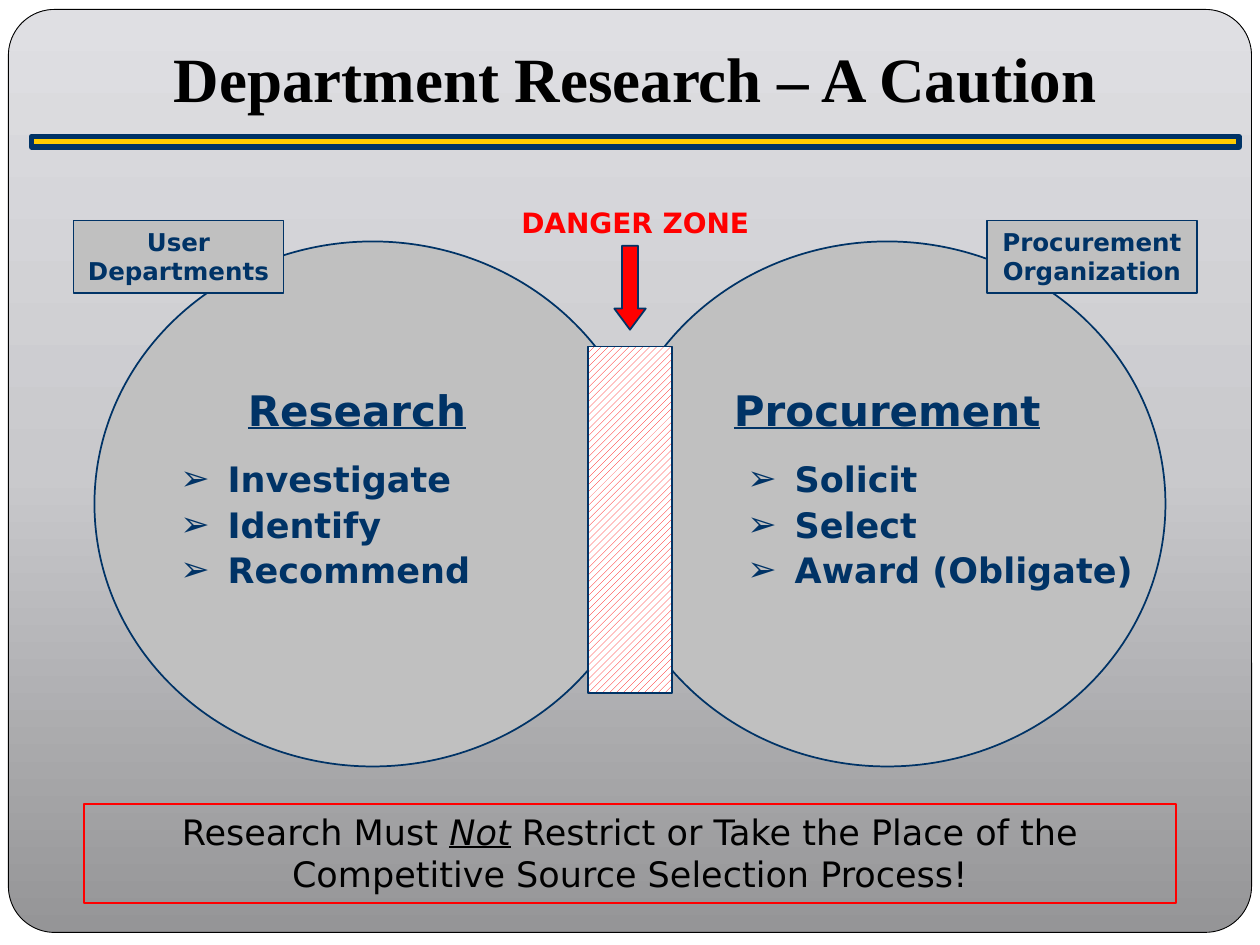
from dataclasses import dataclass

from lxml import etree
from pptx import Presentation
from pptx import util as u
from pptx.dml.color import RGBColor
from pptx.enum import dml, shapes, text
from pptx.oxml import parse_xml
from pptx.oxml.ns import nsdecls, qn

PX = 7620  # 120 px to the inch


@dataclass(frozen=True)
class Theme:
    navy: str = "003366"
    gray: str = "C0C0C0"
    red: str = "FF0000"
    gold: str = "FFCC00"
    black: str = "000000"
    white: str = "FFFFFF"
    panel_stops: tuple = ((0, "959597"), (50, "C9C9CC"), (100, "DFDFE3"))
    title_font: str = "Times New Roman"
    body_font: str = "DejaVu Sans"
    title_size: int = 36
    heading_size: int = 24
    body_size: int = 20
    label_size: int = 16
    tag_size: int = 14


THEME = Theme()
SHAPE = shapes.MSO_SHAPE


def px(*lengths):
    return [u.Emu(length * PX) for length in lengths]


def rgb(color):
    return RGBColor.from_string(color)


def style_run(run, size, color, bold=True, font=THEME.body_font):
    run.font.name = font
    run.font.size = u.Pt(size)
    run.font.bold = bold
    run.font.color.rgb = rgb(color)


def add_box(slide, kind, box, fill=None, line=None, width=1):
    shape = slide.shapes.add_shape(kind, *px(*box))
    shape.shadow.inherit = False
    if fill:
        shape.fill.solid()
        shape.fill.fore_color.rgb = rgb(fill)
    else:
        shape.fill.background()
    if line:
        shape.line.color.rgb = rgb(line)
        shape.line.width = u.Pt(width)
    else:
        shape.line.fill.background()
    return shape


def write_centered(shape, parts, size, color, bold=True):
    frame = shape.text_frame
    frame.word_wrap = True
    frame.vertical_anchor = text.MSO_ANCHOR.TOP
    paragraph = frame.paragraphs[0]
    paragraph.alignment = text.PP_ALIGN.CENTER
    for part in parts:
        run = paragraph.add_run()
        run.text = part
        style_run(run, size, color, bold)
    return paragraph.runs


def add_panel(slide):
    panel = add_box(slide, SHAPE.ROUNDED_RECTANGLE, (8, 9, 1184, 879),
                    line=THEME.black, width=0.5)
    panel.adjustments[0] = 0.05
    stops = "".join(f'<a:gs pos="{pos * 1000}"><a:srgbClr val="{color}"/></a:gs>'
                    for pos, color in THEME.panel_stops)
    gradient = parse_xml(f'<a:gradFill {nsdecls("a")}><a:gsLst>{stops}</a:gsLst>'
                         '<a:lin ang="16200000" scaled="0"/></a:gradFill>')
    properties = panel._element.spPr
    properties.replace(properties.find(qn("a:noFill")), gradient)


def add_title(slide, wording):
    title = slide.shapes.title
    title.left, title.top, title.width, title.height = px(55, 42, 1100, 80)
    frame = title.text_frame
    frame.text = wording
    frame.auto_size = text.MSO_AUTO_SIZE.NONE
    frame.vertical_anchor = text.MSO_ANCHOR.BOTTOM
    frame.margin_bottom, = px(12)
    frame.paragraphs[0].alignment = text.PP_ALIGN.CENTER
    style_run(frame.paragraphs[0].runs[0], THEME.title_size, THEME.black,
              font=THEME.title_font)
    # Bring the title in front of the panel
    slide.shapes._spTree.append(title._element)


def add_heading(slide, box, wording):
    heading = add_box(slide, SHAPE.RECTANGLE, box, THEME.gray)
    run, = write_centered(heading, [wording], THEME.heading_size, THEME.navy)
    run.font.underline = True


def add_bullets(slide, box, items):
    frame = slide.shapes.add_textbox(*px(*box)).text_frame
    frame.word_wrap = True
    frame.text = "\n".join(items)
    for index, paragraph in enumerate(frame.paragraphs):
        paragraph.space_before = u.Pt(2 if index else 0)
        style_run(paragraph.runs[0], THEME.body_size, THEME.navy)
        properties = paragraph._p.get_or_add_pPr()
        properties.set("marL", str(45 * PX))
        properties.set("indent", str(-45 * PX))
        etree.SubElement(properties, qn("a:buFont")).set("typeface", THEME.body_font)
        etree.SubElement(properties, qn("a:buChar")).set("char", "➢")


def add_tag(slide, left, wording):
    tag = add_box(slide, SHAPE.RECTANGLE, (left, 210, 200, 69),
                  THEME.gray, THEME.navy)
    write_centered(tag, [wording], THEME.tag_size, THEME.navy)


def add_danger_zone(slide):
    zone = add_box(slide, SHAPE.RECTANGLE, (560, 330, 80, 330), line=THEME.navy)
    zone.fill.patterned()
    zone.fill.pattern = dml.MSO_PATTERN.WIDE_UPWARD_DIAGONAL
    zone.fill.fore_color.rgb = rgb(THEME.red)
    zone.fill.back_color.rgb = rgb(THEME.white)

    label = slide.shapes.add_textbox(*px(440, 190, 330, 44))
    write_centered(label, ["DANGER ZONE"], THEME.label_size, THEME.red)

    arrow = add_box(slide, SHAPE.DOWN_ARROW, (585, 234, 30, 80),
                    THEME.red, THEME.navy)
    arrow.adjustments[0] = 0.5
    arrow.adjustments[1] = 0.67


def add_warning(slide):
    warning = add_box(slide, SHAPE.RECTANGLE, (80, 766, 1040, 94), line=THEME.red)
    parts = ["Research Must ", "Not", " Restrict or Take the Place of the "
             "Competitive Source Selection Process!"]
    runs = write_centered(warning, parts, THEME.body_size, THEME.black, bold=False)
    runs[1].font.italic = True
    runs[1].font.underline = True


def main():
    deck = Presentation()
    deck.slide_width, deck.slide_height = px(1200, 900)
    slide = deck.slides.add_slide(deck.slide_layouts[5])

    # Backdrop, title and rule
    add_panel(slide)
    add_title(slide, "Department Research – A Caution")
    add_box(slide, SHAPE.RECTANGLE, (30, 130, 1150, 10),
            THEME.gold, THEME.navy, width=3)

    # Overlapping circles
    for left in (580, 90):
        add_box(slide, SHAPE.OVAL, (left, 230, 530, 500), THEME.gray, THEME.navy)

    # Circle contents
    add_heading(slide, (130, 360, 420, 60), "Research")
    add_bullets(slide, (160, 430, 320, 140),
                ["Investigate", "Identify", "Recommend"])
    add_heading(slide, (655, 360, 380, 60), "Procurement")
    add_bullets(slide, (700, 430, 420, 140),
                ["Solicit", "Select", "Award (Obligate)"])

    # Overlap, warning and owners
    add_danger_zone(slide)
    add_warning(slide)
    add_tag(slide, 940, "Procurement Organization")
    add_tag(slide, 70, "User Departments")

    deck.save("out.pptx")


if __name__ == "__main__":
    main()
